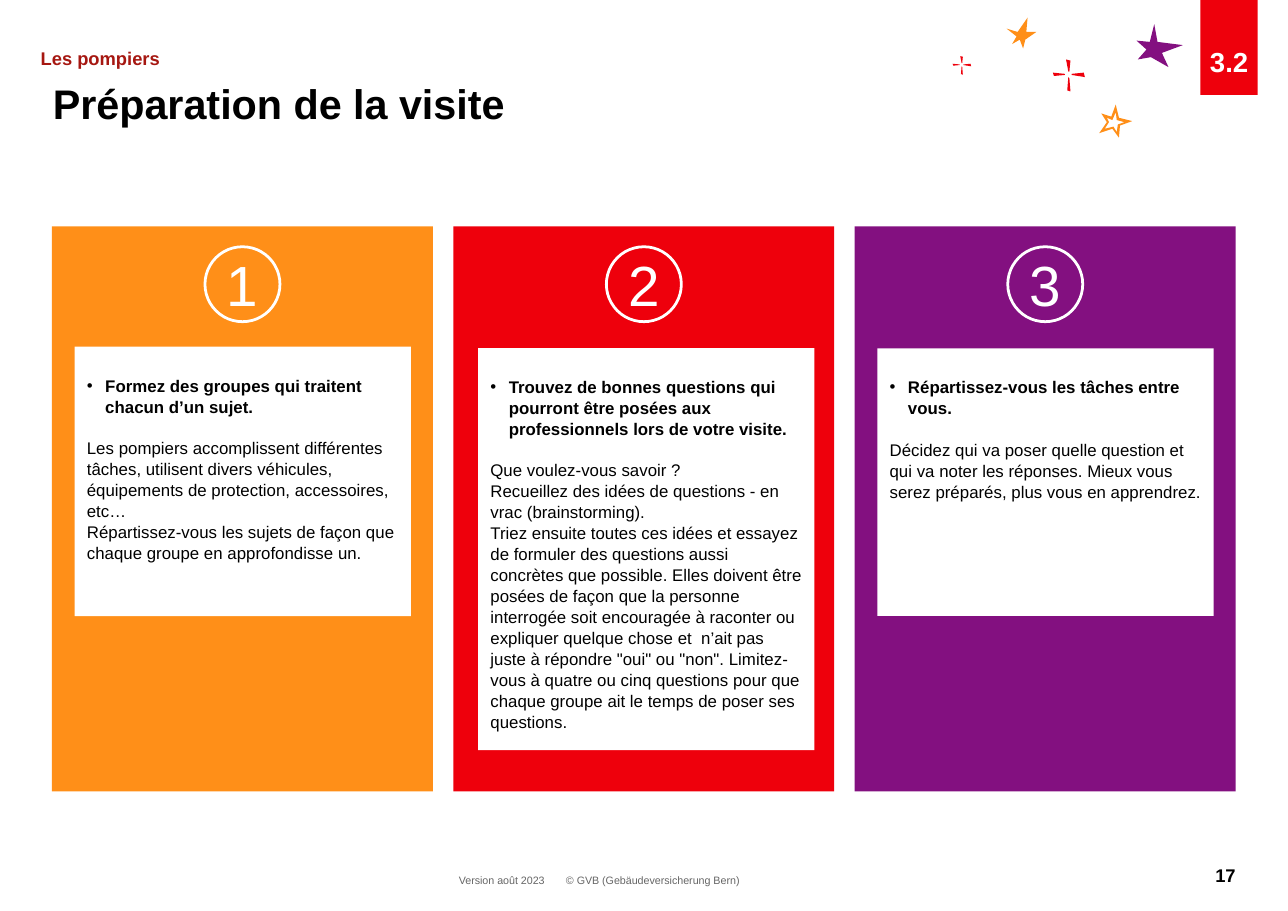
from lxml.etree import SubElement
from pptx import Presentation
from pptx.dml.color import RGBColor as RGB
from pptx.enum.shapes import MSO_SHAPE as SHAPE
from pptx.enum.text import MSO_ANCHOR as ANCHOR, MSO_AUTO_SIZE as AUTO, PP_ALIGN as ALIGN
from pptx.oxml.ns import qn
from pptx.util import Pt

ORANGE = RGB(0xFF, 0x8F, 0x18)
RED = RGB(0xEE, 0x00, 0x0C)
PURPLE = RGB(0x83, 0x10, 0x80)
DARK_RED = RGB(0xA6, 0x17, 0x11)
GREY = RGB(0x66, 0x66, 0x66)
BLACK = RGB(0, 0, 0)
WHITE = RGB(0xFF, 0xFF, 0xFF)


def write(sp, text, size=11, color=BLACK, bold=False, align=ALIGN.LEFT, anchor=ANCHOR.TOP,
          inset=(0, 0, 0, 0), spacing=1.0, before=0, bullet=False, more=False):
    tf = sp.text_frame
    tf.word_wrap = True
    tf.auto_size = AUTO.NONE
    tf.vertical_anchor = anchor
    tf.margin_left, tf.margin_top, tf.margin_right, tf.margin_bottom = map(Pt, inset)
    p = tf.add_paragraph() if more else tf.paragraphs[0]
    p.alignment = align
    p.line_spacing = spacing
    p.space_before = Pt(before)
    p.space_after = Pt(0)
    pPr = p._p.get_or_add_pPr()
    pPr.set("marL", str(Pt(12) if bullet else 0))
    pPr.set("indent", str(Pt(-12) if bullet else 0))
    if bullet:
        SubElement(pPr, qn("a:buFont")).set("typeface", "Arial")
        SubElement(pPr, qn("a:buChar")).set("char", "•")
    else:
        SubElement(pPr, qn("a:buNone"))
    r = p.add_run()
    r.text = text
    r.font.name = "Arial"
    r.font.size = Pt(size)
    r.font.bold = bold
    r.font.color.rgb = color


def draw(contours, color):
    start, *rest = [[(Pt(x), Pt(y)) for x, y in c] for c in contours]
    fb = s.shapes.build_freeform(*start[0])
    fb.add_line_segments(start[1:])
    for c in rest:
        fb.move_to(*c[0])
        fb.add_line_segments(c[1:])
    sp = fb.convert_to_shape()
    sp.shadow.inherit = False
    sp.fill.solid()
    sp.fill.fore_color.rgb = color
    sp.line.fill.background()


prs = Presentation()
prs.slide_width, prs.slide_height = Pt(842), Pt(595.5)
s = prs.slides.add_slide(prs.slide_layouts[4])
title, chapter, *cards = s.placeholders

purple_star = [(751.7, 27.4), (743, 26.6), (749.5, 32.4), (743.8, 38.9), (752.4, 37.4),
               (763.9, 43.9), (759.6, 34.6), (773.3, 29.5), (756.7, 27.4), (754.6, 15.8)]
orange_star = [(661.7, 28.8), (666.7, 25.9), (668.9, 31.7), (670.3, 25.9), (677.5, 20.9),
               (671, 20.9), (671.8, 11.5), (665.3, 20.9), (658.1, 18.7), (664.6, 23.8)]
star_rim = [(731.5, 90), (727.2, 84.2), (718.6, 87.1), (723.6, 79.9), (720, 74.2),
            (726.5, 76.3), (729.4, 68.4), (731.5, 77), (740.2, 79.2), (732.2, 82.1)]
star_hole = [(727.9, 82.8), (730.1, 86.4), (730.8, 81.4), (735.1, 79.9), (730.1, 78.5),
             (729.4, 73.4), (727.2, 78.5), (723.6, 77), (725, 79.9), (722.2, 84.2)]
sparkle = [[(10.1, 7.9), (8.6, 0), (11.5, 0.7), (10.8, 7.9)],
           [(10.8, 12.2), (11.5, 20.9), (9.4, 20.2), (10.1, 11.5)],
           [(12.2, 9.4), (20.2, 8.6), (20.9, 11.5), (12.2, 10.1)],
           [(7.9, 10.1), (0.7, 10.8), (0, 8.6), (7.9, 9.4)]]

draw([purple_star], PURPLE)
draw([orange_star], ORANGE)
draw([star_rim, star_hole], ORANGE)
for left, top, scale in [(688.3, 38.9, 1), (622.8, 36.7, 0.58)]:
    draw([[(left + x * scale, top + y * scale) for x, y in ray] for ray in sparkle], RED)

for sp, box in [(title, (34.5, 51, 638, 40)), (chapter, (26.6, 33.8, 581, 15))]:
    sp.left, sp.top, sp.width, sp.height = map(Pt, box)
write(title, "Préparation de la visite", size=27, bold=True)
write(chapter, "Les pompiers", size=12, color=DARK_RED, bold=True, spacing=0.8)

tab = s.shapes.add_shape(SHAPE.RECTANGLE, Pt(784.8), Pt(0), Pt(37.4), Pt(62))
tab.shadow.inherit = False
tab.fill.solid()
tab.fill.fore_color.rgb = RED
tab.line.fill.background()
write(tab, "3.2", size=18, color=WHITE, bold=True, align=ALIGN.CENTER,
      anchor=ANCHOR.BOTTOM, inset=(0, 0, 0, 10.8))

steps = [
    (ORANGE, (48.8, 226.6, 176.2), "Formez des groupes qui traitent chacun d’un sujet.", [
        "Les pompiers accomplissent différentes tâches, utilisent divers véhicules, "
        "équipements de protection, accessoires, etc…",
        "Répartissez-vous les sujets de façon que chaque groupe en approfondisse un."]),
    (RED, (312.6, 227.5, 262.8),
     "Trouvez de bonnes questions qui pourront être posées aux professionnels lors de votre visite.", [
        "Que voulez-vous savoir ?",
        "Recueillez des idées de questions - en vrac (brainstorming).",
        "Triez ensuite toutes ces idées et essayez de formuler des questions aussi concrètes "
        "que possible. Elles doivent être posées de façon que la personne interrogée soit "
        "encouragée à raconter ou expliquer quelque chose et  n’ait pas juste à répondre "
        "\"oui\" ou \"non\". Limitez-vous à quatre ou cinq questions pour que chaque groupe "
        "ait le temps de poser ses questions."]),
    (PURPLE, (573.6, 227.8, 174.8), "Répartissez-vous les tâches entre vous.", [
        "Décidez qui va poser quelle question et qui va noter les réponses. "
        "Mieux vous serez préparés, plus vous en apprendrez."]),
]
panel_w, circle_w = 249, 49
card_text = dict(inset=(8, 18.2, 8, 5), spacing=1.04)

for i, (card, (color, (left, top, height), task, details)) in enumerate(zip(cards, steps)):
    x = 34 + 262.4 * i
    panel = s.shapes.add_shape(SHAPE.RECTANGLE, Pt(x), Pt(147.9), Pt(panel_w), Pt(369.5))
    panel.shadow.inherit = False
    panel.fill.solid()
    panel.fill.fore_color.rgb = color
    panel.line.fill.background()

    circle = s.shapes.add_shape(SHAPE.OVAL, Pt(x + (panel_w - circle_w) / 2), Pt(161.3),
                                Pt(circle_w), Pt(circle_w))
    circle.shadow.inherit = False
    circle.fill.background()
    circle.line.color.rgb = WHITE
    circle.line.width = Pt(1.8)
    write(circle, str(i + 1), size=37, color=WHITE, align=ALIGN.CENTER, anchor=ANCHOR.MIDDLE)

    card.left, card.top, card.width, card.height = map(Pt, (left, top, 219.8, height))
    card.fill.solid()
    card.fill.fore_color.rgb = WHITE
    write(card, task, bold=True, bullet=True, **card_text)
    for j, text in enumerate(details):
        write(card, text, before=0 if j else 13.2, more=True, **card_text)
    panel.element.getparent().append(card.element)

for text, box, form in [
    ("Version août 2023", (297.4, 571, 61.2, 9), dict(size=7, color=GREY, align=ALIGN.CENTER)),
    ("© GVB (Gebäudeversicherung Bern)", (370, 571, 120, 9), dict(size=7, color=GREY)),
    ("17", (756.7, 565.2, 51.1, 14), dict(size=12, bold=True, align=ALIGN.RIGHT)),
]:
    write(s.shapes.add_textbox(*map(Pt, box)), text, **form)

prs.save("out.pptx")
